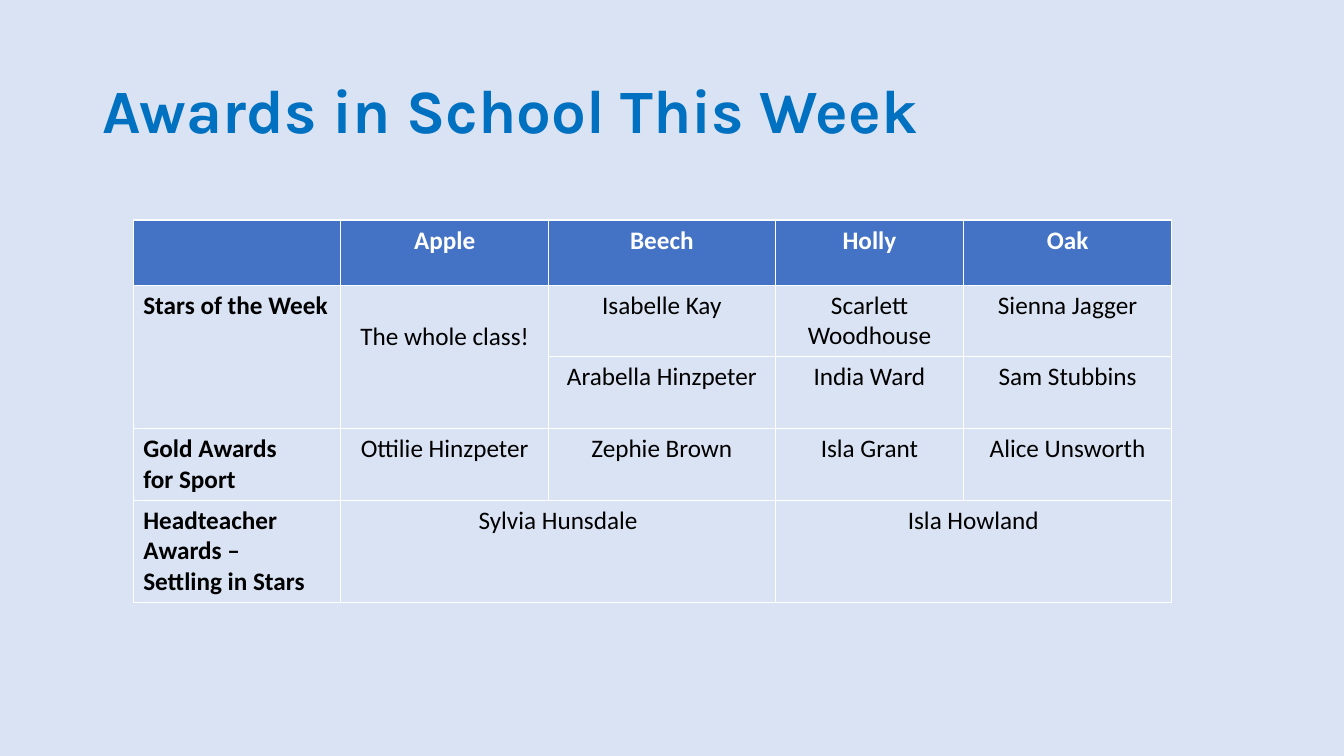
from pptx import Presentation
from pptx import util as u
from pptx.dml.color import RGBColor
from pptx.enum import text

PALE_BLUE = RGBColor(0xDA, 0xE3, 0xF3)
HEADER_BLUE = RGBColor(0x44, 0x72, 0xC4)
TITLE_BLUE = RGBColor(0x00, 0x70, 0xC0)
WHITE = RGBColor(0xFF, 0xFF, 0xFF)
BLACK = RGBColor(0x00, 0x00, 0x00)

LINE_HEIGHT = 22
COLUMN_SHARES = [0.2, 0.2, 0.2184, 0.1816, 0.2]
ROW_HEIGHTS = [46.5, 51.2, 51.2, 51.2, 73.1]

# Each cell is a list of paragraphs; empty lists are blank or merged away
AWARDS = [
    [[], ["Apple"], ["Beech"], ["Holly"], ["Oak"]],
    [["Stars of the Week"], ["The whole class!"], ["Isabelle Kay"],
     ["Scarlett Woodhouse"], ["Sienna Jagger"]],
    [[], [], ["Arabella Hinzpeter"], ["India Ward"], ["Sam Stubbins"]],
    [["Gold Awards", "for Sport"], ["Ottilie Hinzpeter"], ["Zephie Brown"],
     ["Isla Grant"], ["Alice Unsworth"]],
    [["Headteacher Awards –", "Settling in Stars"], ["Sylvia Hunsdale"], [],
     ["Isla Howland"], []],
]
# First and last (row, column) of each merged block
MERGES = [((1, 0), (2, 0)), ((1, 1), (2, 1)), ((4, 1), (4, 2)), ((4, 3), (4, 4))]


def add_run(paragraph, words, font, size, color, bold):
    run = paragraph.add_run()
    run.text = words
    run.font.name = font
    run.font.size = u.Pt(size)
    run.font.bold = bold
    run.font.color.rgb = color


def place_title(slide, left, top, width, height):
    title = slide.shapes.title
    title.left, title.top = u.Pt(left), u.Pt(top)
    title.width, title.height = u.Pt(width), u.Pt(height)
    title.text_frame.vertical_anchor = text.MSO_ANCHOR.MIDDLE
    heading = title.text_frame.paragraphs[0]
    heading.alignment = text.PP_ALIGN.LEFT
    heading.line_spacing = 0.9
    add_run(heading, "Awards in School This Week", "Karla", 44, TITLE_BLUE, True)


def fill_cell(cell, lines, is_header, is_label):
    cell.fill.solid()
    cell.fill.fore_color.rgb = HEADER_BLUE if is_header else PALE_BLUE
    for number, line in enumerate(lines):
        frame = cell.text_frame
        paragraph = frame.add_paragraph() if number else frame.paragraphs[0]
        paragraph.alignment = text.PP_ALIGN.LEFT if is_label else text.PP_ALIGN.CENTER
        add_run(paragraph, line, "Calibri", 18,
                WHITE if is_header else BLACK, is_header or is_label)


def place_awards(slide, left, top, width):
    awards = slide.shapes.add_table(
        len(ROW_HEIGHTS), len(COLUMN_SHARES), u.Pt(left), u.Pt(top),
        u.Pt(width), u.Pt(sum(ROW_HEIGHTS))).table
    awards.horz_banding = False
    for column, share in zip(awards.columns, COLUMN_SHARES):
        column.width = u.Pt(width * share)
    for row, height in zip(awards.rows, ROW_HEIGHTS):
        row.height = u.Pt(height)
    for first, last in MERGES:
        awards.cell(*first).merge(awards.cell(*last))
    for r, row in enumerate(AWARDS):
        for c, lines in enumerate(row):
            fill_cell(awards.cell(r, c), lines, r == 0, c == 0)
    # The whole-class award sits one line lower
    awards.cell(1, 1).margin_top = u.Pt(3.6 + LINE_HEIGHT)


def build_awards_slide(deck):
    slide = deck.slides.add_slide(deck.slide_layouts[5])
    slide.background.fill.solid()
    slide.background.fill.fore_color.rgb = PALE_BLUE
    place_title(slide, 66, 28.75, 828, 104.4)
    place_awards(slide, 95.2, 157.2, 741.6)


def main():
    deck = Presentation()
    deck.slide_width, deck.slide_height = u.Pt(960), u.Pt(540)
    build_awards_slide(deck)
    deck.save("out.pptx")


if __name__ == "__main__":
    main()
